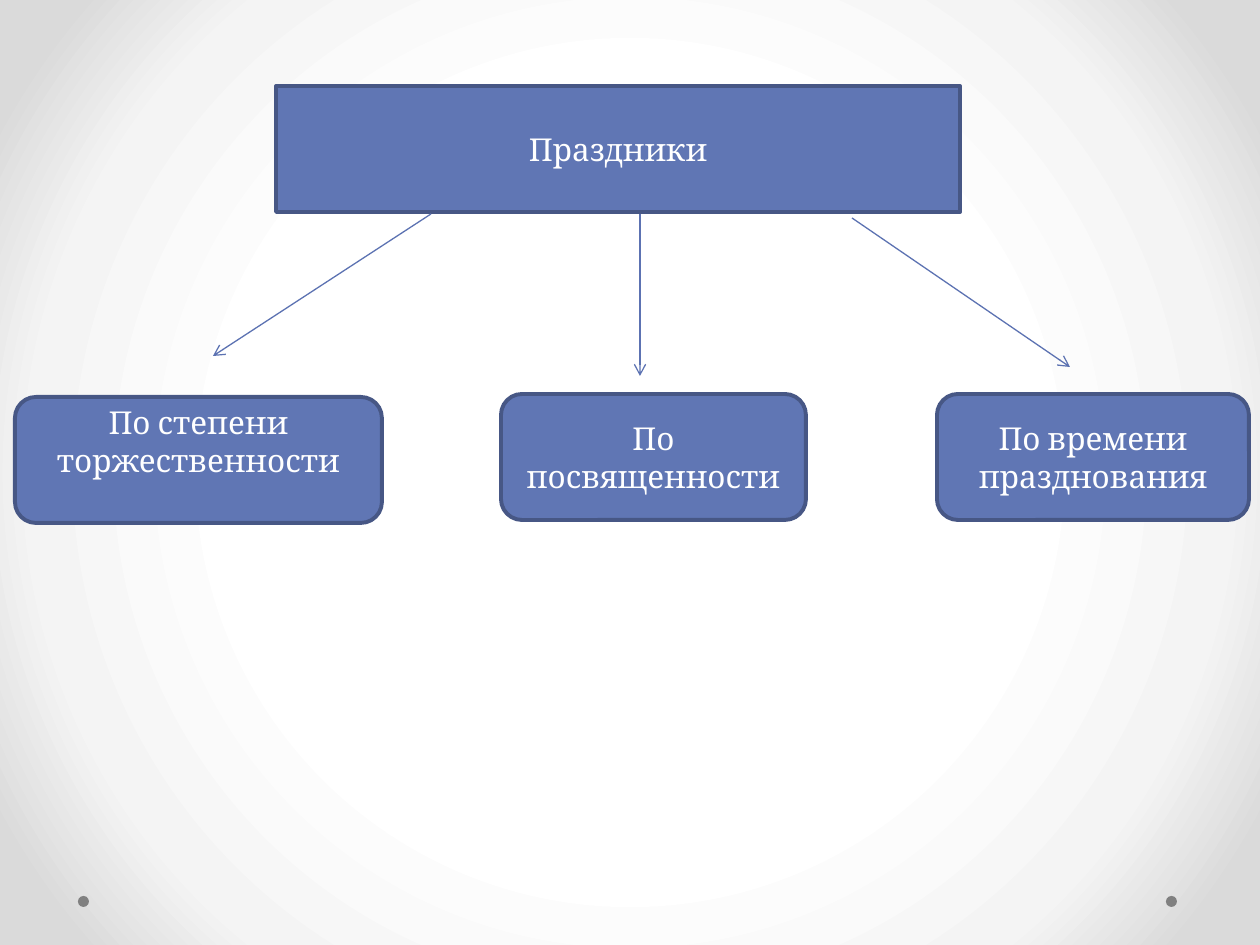
from collections import namedtuple
from dataclasses import dataclass

from pptx import Presentation
from pptx.dml.color import RGBColor
from pptx.enum.shapes import MSO_CONNECTOR, MSO_SHAPE
from pptx.enum.text import MSO_ANCHOR, PP_ALIGN
from pptx.oxml import parse_xml
from pptx.oxml.ns import nsdecls
from pptx.util import Emu, Pt

Box = namedtuple("Box", "left top width height")


@dataclass(frozen=True)
class Theme:
    fill: str = "6076B4"
    border: str = "475785"
    arrow: str = "5C72B2"
    dot: str = "808080"
    text: str = "FFFFFF"
    glow: tuple = ((50, "FFFFFF"), (76, "F4F4F4"), (92, "DADADA"))
    font: str = "Cambria"
    text_size: int = 18
    border_width: float = 2.25
    arrow_width: float = 0.75


THEME = Theme()
LINE_HEIGHT = 38
INSET = 6


def px(value):
    return Emu(round(value * 914400 / 126))


def apply(target, formats):
    for name, value in formats.items():
        setattr(target, name, value)


def within(box, left, top, width, height):
    return Box(box.left + left, box.top + top, width, height)


def add_plain_shape(page, kind, box, color):
    shape = page.shapes.add_shape(kind, *map(px, box))
    shape.shadow.inherit = False
    shape.fill.solid()
    shape.fill.fore_color.rgb = RGBColor.from_string(color)
    shape.line.fill.background()
    return shape


def add_label(page, kind, box, text, lift=0):
    shape = add_plain_shape(page, kind, box, THEME.fill)
    shape.line.color.rgb = RGBColor.from_string(THEME.border)
    shape.line.width = Pt(THEME.border_width)
    frame = shape.text_frame
    apply(frame, {"word_wrap": True, "vertical_anchor": MSO_ANCHOR.MIDDLE,
                  "margin_top": px(INSET), "margin_bottom": px(INSET + lift)})
    para = frame.paragraphs[0]
    para.alignment = PP_ALIGN.CENTER
    span = para.add_run()
    span.text = text
    apply(span.font, {"name": THEME.font, "size": Pt(THEME.text_size)})
    span.font.color.rgb = RGBColor.from_string(THEME.text)


def add_arrow(page, box, start, end):
    points = [px(value) for x, y in (start, end)
              for value in (box.left + x, box.top + y)]
    arrow = page.shapes.add_connector(MSO_CONNECTOR.STRAIGHT, *points)
    arrow.line.color.rgb = RGBColor.from_string(THEME.arrow)
    arrow.line.width = Pt(THEME.arrow_width)
    arrow.line._get_or_add_ln().append(
        parse_xml(f'<a:tailEnd {nsdecls("a")} type="arrow"/>'))
    arrow._element.spPr.append(parse_xml(f'<a:effectLst {nsdecls("a")}/>'))


def paint_background(page):
    page.background.fill.gradient()
    old = page._element.xpath(".//p:bgPr/a:gradFill")[0]
    stops = "".join(
        f'<a:gs pos="{place * 1000}"><a:srgbClr val="{color}"/></a:gs>'
        for place, color in THEME.glow)
    old.getparent().replace(old, parse_xml(
        f'<a:gradFill {nsdecls("a")} rotWithShape="1"><a:gsLst>{stops}</a:gsLst>'
        '<a:path path="circle"><a:fillToRect l="50000" t="50000" r="50000" '
        'b="50000"/></a:path></a:gradFill>'))


def draw_footer_dots(page, box):
    size = box.height
    for left in (box.width - size, 0):
        add_plain_shape(page, MSO_SHAPE.OVAL, within(box, left, 0, size, size),
                        THEME.dot)


def draw_holiday_tree(page, box):
    label_height = 126
    # Heading
    add_label(page, MSO_SHAPE.RECTANGLE, within(box, 261, 0, 684, label_height),
              "Праздники")
    # Arrows to the branches
    for start, end in (((416, 128), (198, 270)),
                       ((625, 128), (625, 290)),
                       ((837, 132), (1055, 281))):
        add_arrow(page, box, start, end)
    # Branches
    for left, top, width, text, lift in (
            (0, 311, 367, "По степени торжественности", LINE_HEIGHT),
            (486, 308, 305, "По посвященности", 0),
            (922, 308, 312, "По времени празднования", 0)):
        add_label(page, MSO_SHAPE.ROUNDED_RECTANGLE,
                  within(box, left, top, width, label_height), text, lift)


def main():
    deck = Presentation()
    apply(deck, {"slide_width": px(1260), "slide_height": px(945)})
    page = deck.slides.add_slide(deck.slide_layouts[6])
    paint_background(page)
    draw_footer_dots(page, Box(78, 896, 1099, 11))
    draw_holiday_tree(page, Box(15, 86, 1234, 437))
    deck.save("out.pptx")


if __name__ == "__main__":
    main()
